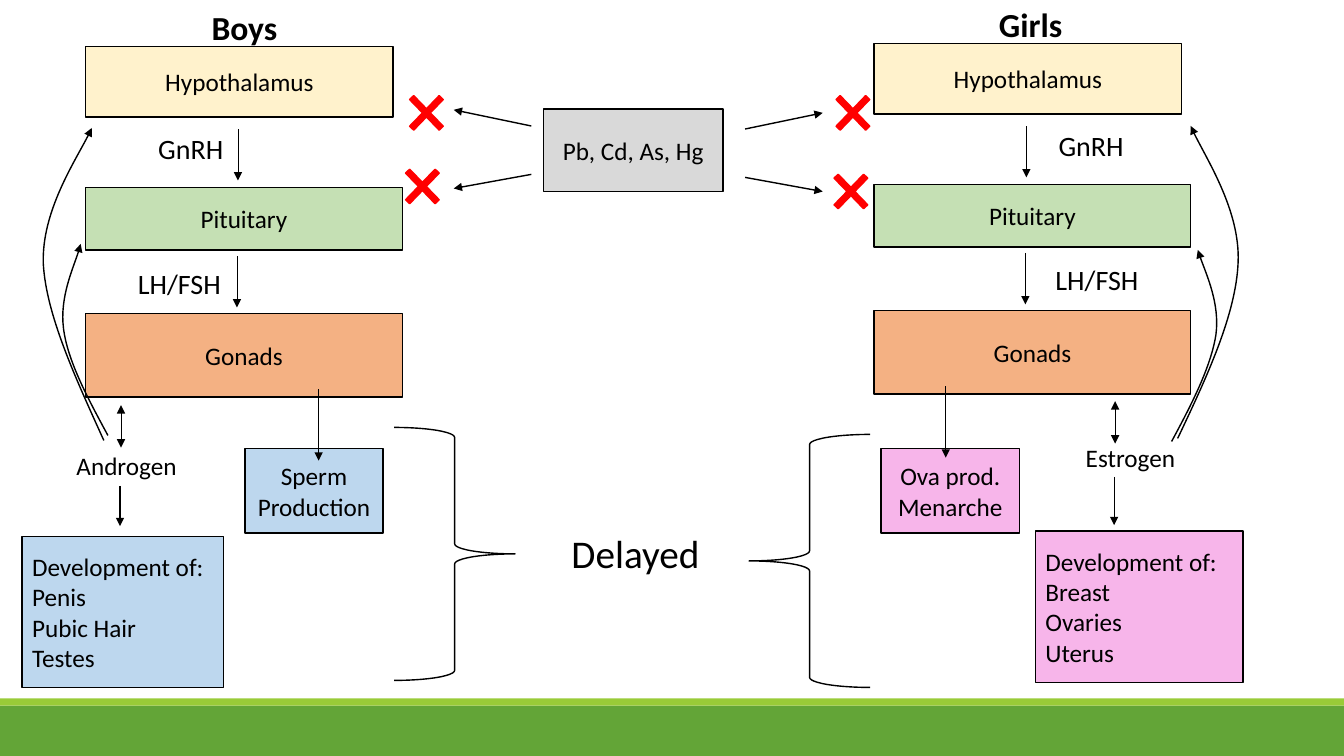
from lxml import etree
from pptx import Presentation
from pptx.dml.color import RGBColor
from pptx.enum.shapes import MSO_CONNECTOR, MSO_SHAPE
from pptx.enum.text import MSO_ANCHOR, MSO_AUTO_SIZE, PP_ALIGN
from pptx.oxml.ns import qn
from pptx.util import Pt

RECT = MSO_SHAPE.RECTANGLE
CROSS = MSO_SHAPE.MATH_MULTIPLY
LEFT_BRACE, RIGHT_BRACE = MSO_SHAPE.LEFT_BRACE, MSO_SHAPE.RIGHT_BRACE
STRAIGHT = MSO_CONNECTOR.STRAIGHT
LEFT, CENTER = PP_ALIGN.LEFT, PP_ALIGN.CENTER
MIDDLE = MSO_ANCHOR.MIDDLE
FIT = MSO_AUTO_SIZE.SHAPE_TO_FIT_TEXT

PX = 9144
BLACK, RED = "000000", "FF0000"
CREAM, GREEN, ORANGE, GRAY = "FFF2CC", "C5E0B4", "F4B183", "D9D9D9"
BLUE, PINK = "BDD7EE", "F7B5EA"


def px(*values):
    return [v * PX for v in values]


def color(hex_text):
    return RGBColor.from_string(hex_text)


def write(tf, text, size=18, bold=False, align=LEFT):
    tf.word_wrap = True
    for i, line in enumerate(text.split("\n")):
        p = tf.paragraphs[0] if i == 0 else tf.add_paragraph()
        p.alignment = align
        r = p.add_run()
        r.text = line
        r.font.name = "Calibri"
        r.font.size = Pt(size)
        r.font.bold = bold
        r.font.color.rgb = color(BLACK)


class Diagram:
    def __init__(self, slide):
        self.shapes = slide.shapes

    def stroke(self, s, width, line=BLACK, ends=()):
        s.line.color.rgb = color(line)
        s.line.width = Pt(width)
        ln = s._element.spPr.find(qn("a:ln"))
        for end in ends:
            etree.SubElement(ln, qn(f"a:{end}"), type="triangle")

    def shape(self, kind, at, fill=None, line=None, width=1):
        s = self.shapes.add_shape(kind, *px(*at))
        s.shadow.inherit = False
        if fill:
            s.fill.solid()
            s.fill.fore_color.rgb = color(fill)
        else:
            s.fill.background()
        if line:
            self.stroke(s, width, line)
        else:
            s.line.fill.background()
        return s

    def box(self, text, at, fill, align=CENTER):
        s = self.shape(RECT, at, fill, BLACK)
        s.text_frame.vertical_anchor = MIDDLE
        write(s.text_frame, text, align=align)

    def label(self, text, at, **style):
        s = self.shapes.add_textbox(*px(*at))
        write(s.text_frame, text, **style)
        s.text_frame.auto_size = FIT

    def cross(self, x, y):
        s = self.shape(CROSS, (x, y, 56, 58), RED, RED, 1.25)
        s.adjustments[0] = 0.095

    def arrow(self, x1, y1, x2, y2, width=1, ends=("tailEnd",)):
        s = self.shapes.add_connector(STRAIGHT, *px(x1, y1, x2, y2))
        self.stroke(s, width, ends=ends)
        etree.SubElement(s._element.spPr, qn("a:effectLst"))

    def curve(self, start, *points):
        builder = self.shapes.build_freeform(*start, scale=PX)
        builder.add_line_segments(points, close=False)
        s = builder.convert_to_shape()
        outline = next(s._element.iter(qn("a:path")))
        steps = outline.findall(qn("a:lnTo"))
        for i in range(0, len(steps), 3):
            bezier = etree.SubElement(outline, qn("a:cubicBezTo"))
            for step in steps[i:i + 3]:
                bezier.append(step[0])
                outline.remove(step)
        s.fill.background()
        s.shadow.inherit = False
        self.stroke(s, 1, ends=("tailEnd",))

    def axis(self, title, title_x, x, y, gnrh_x, lh_x):
        self.box("Hypothalamus", (x, y, 305, 70), CREAM)
        self.label(title, (title_x, y - 44, 96, 50), size=24, bold=True)
        self.box("Pituitary", (x, y + 140, 314, 62), GREEN)
        self.box("Gonads", (x, y + 265, 314, 83), ORANGE)
        self.arrow(x + 151, y + 82, x + 151, y + 133, 0.5)
        self.arrow(x + 150, y + 208, x + 150, y + 259, 0.5)
        self.label("GnRH", (gnrh_x, y + 80, 95, 44), size=20)
        self.label("LH/FSH", (lh_x, y + 213, 120, 44), size=20)

    def hormone(self, name, at, x, y):
        self.arrow(x, y, x, y + 42, 0.5, ("headEnd", "tailEnd"))
        self.label(name, at)


def main():
    prs = Presentation()
    prs.slide_width, prs.slide_height = px(1333, 750)
    d = Diagram(prs.slides.add_slide(prs.slide_layouts[6]))

    d.shape(RECT, (0, 700, 1333, 50), "63A537")
    d.shape(RECT, (0, 693, 1333, 7), "99CB38")
    d.box("Pb, Cd, As, Hg", (539, 108, 178, 82), GRAY)

    d.axis("Boys", 200, 85, 46, 147, 127)
    d.box("Sperm Production", (243, 445, 137, 84), BLUE)
    d.box("Development of:\nPenis\nPubic Hair\nTestes", (22, 532, 200, 150), BLUE, LEFT)
    d.hormone("Androgen", (66, 442, 121, 40), 120, 402)
    d.arrow(119, 482, 119, 522)
    d.curve((103, 437), (75, 375), (46, 313), (43, 262), (41, 210), (81, 150), (91, 127))
    d.curve((107, 432), (87, 395), (67, 358), (63, 326), (59, 295), (77, 256), (80, 242))

    d.axis("Girls", 981, 867, 43, 1040, 1037)
    d.box("Ova prod.\nMenarche", (874, 445, 137, 84), PINK)
    d.box("Development of:\nBreast\nOvaries\nUterus", (1027, 527, 206, 150), PINK, LEFT)
    d.hormone("Estrogen", (1067, 434, 121, 40), 1106, 398)
    d.arrow(1105, 473, 1105, 521, 0.5)
    d.curve((1162, 438), (1182, 401), (1201, 364), (1206, 332), (1210, 301), (1192, 262), (1188, 248))
    d.curve((1168, 435), (1197, 374), (1226, 312), (1228, 260), (1230, 209), (1191, 149), (1181, 125))

    for x, y in ((818, 83), (816, 161), (395, 83), (391, 156)):
        d.cross(x, y)
    for x, tip, y in ((739, 816, 128), (527, 450, 125)):
        d.arrow(x, y, tip, y - 16)
        d.arrow(x, y + 48, tip, y + 62)
    for x, y in ((316, 386), (938, 383)):
        d.arrow(x, y, x, y + 71)

    d.shape(RIGHT_BRACE, (391, 424, 120, 251), line=BLACK)
    d.shape(LEFT_BRACE, (743, 431, 120, 251), line=BLACK)
    d.label("Delayed", (557, 520, 160, 57), size=28)
    prs.save("out.pptx")


if __name__ == "__main__":
    main()
